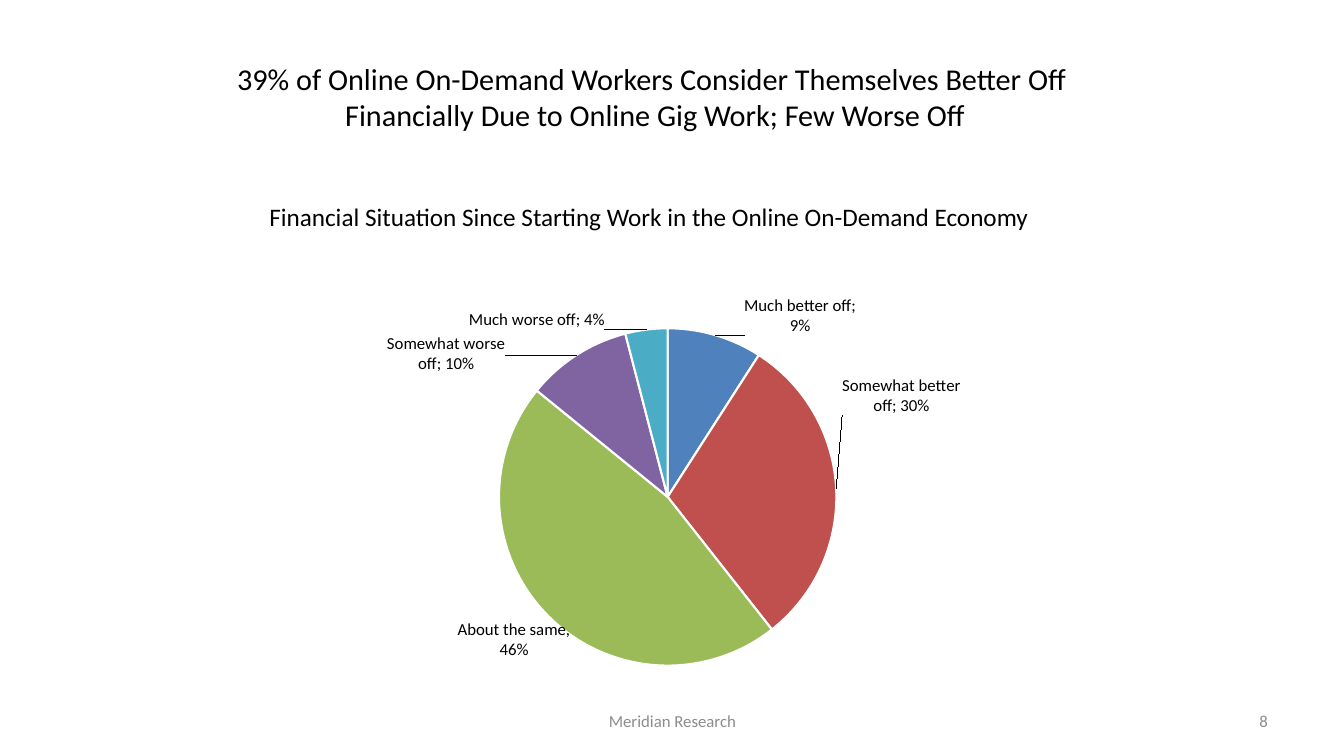
from lxml import etree
from pptx import Presentation
from pptx import util as u
from pptx.chart.data import CategoryChartData
from pptx.dml.color import RGBColor
from pptx.enum import chart as ch
from pptx.enum import text
from pptx.oxml.ns import qn

PX = 9525  # EMU per px, 96 px to the inch
FONT = "Calibri"
COLORS = {
    "text": "000000",
    "muted": "8C8C8C",
    "white": "FFFFFF",
    "blue": "4F81BD",
    "red": "C0504D",
    "green": "9BBB59",
    "purple": "8064A2",
    "teal": "4BACC6",
}
# Category, share, colour, label shift (fractions of the chart), own label text
SLICES = [
    ("Much better off", 0.09, "blue", (0.04, 0.01), None),
    ("Somewhat better off", 0.3, "red", (0, -0.16), None),
    ("About the same", 0.46, "green", (0.04, 0), "About the same, 46%"),
    ("Somewhat worse off", 0.1, "purple", (-0.1, 0.04), None),
    ("Much worse off", 0.04, "teal", (-0.06, 0.01), None),
]


def px(*lengths):
    return [u.Emu(n * PX) for n in lengths]


def rgb(name):
    return RGBColor.from_string(COLORS[name])


def style_font(font, size, color="text"):
    font.name = FONT
    font.size = u.Pt(size)
    font.color.rgb = rgb(color)


def fill_text(sp, content, size, align, color="text"):
    tf = sp.text_frame
    tf.vertical_anchor = text.MSO_ANCHOR.MIDDLE
    tf.text = content
    p = tf.paragraphs[0]
    p.alignment = align
    style_font(p.font, size, color)
    return tf


def add_title(s, content, box):
    sp = s.shapes.title
    sp.left, sp.top, sp.width, sp.height = px(*box)
    fill_text(sp, content, 21.6, text.PP_ALIGN.CENTER)


def add_text(s, content, box, size, align, color="text", wrap=True):
    sp = s.shapes.add_textbox(*px(*box))
    fill_text(sp, content, size, align, color).word_wrap = wrap


def manual_layout(**values):
    layout = etree.Element(qn("c:layout"))
    manual = etree.SubElement(layout, qn("c:manualLayout"))
    for tag, value in values.items():
        etree.SubElement(manual, qn("c:" + tag)).set("val", str(value))
    return layout


def place_plot(chart, x, y, w, h):
    area = chart._chartSpace.chart.plotArea
    for old in area.findall(qn("c:layout")):
        area.remove(old)
    area.insert(0, manual_layout(layoutTarget="inner", xMode="edge", yMode="edge",
                                 x=x, y=y, w=w, h=h))


def add_separator(labels):
    separator = etree.Element(qn("c:separator"))
    separator.text = "; "
    labels.find(qn("c:showBubbleSize")).addnext(separator)


def format_slice(point, color, own_text):
    point.format.fill.solid()
    point.format.fill.fore_color.rgb = rgb(color)
    point.format.line.color.rgb = rgb("white")
    point.format.line.width = u.Pt(1.5)
    label = point.data_label
    if own_text:
        p = label.text_frame.paragraphs[0]
        r = p.add_run()
        r.text = own_text
        style_font(r.font, 12)
    else:
        style_font(label.font, 12)
    label.position = ch.XL_LABEL_POSITION.OUTSIDE_END


def add_pie(s, box):
    data = CategoryChartData(number_format="0%")
    data.categories = [row[0] for row in SLICES]
    data.add_series("Series 1", [row[1] for row in SLICES])
    chart = s.shapes.add_chart(ch.XL_CHART_TYPE.PIE, *px(*box), data).chart
    chart.has_title = False
    chart.has_legend = False
    style_font(chart.font, 10)
    place_plot(chart, 0.23, 0.29, 0.58, 0.58)

    plot = chart.plots[0]
    plot.vary_by_categories = True
    series = plot.series[0]
    labels = series.data_labels
    labels.show_value = labels.show_category_name = True
    labels.number_format = "0%"
    labels.number_format_is_linked = False
    labels.position = ch.XL_LABEL_POSITION.OUTSIDE_END
    style_font(labels.font, 12)
    add_separator(labels._element)

    # Slices and their shifted labels
    for i, (_, _, color, _, own_text) in enumerate(SLICES):
        format_slice(series.points[i], color, own_text)
    for label, (_, _, _, (x, y), _) in zip(series._element.xpath(".//c:dLbl"), SLICES):
        label.insert(1, manual_layout(x=x, y=y))
        label.find(qn("c:showCatName")).set("val", "1")
        add_separator(label)


def main():
    prs = Presentation()
    prs.slide_width, prs.slide_height = px(1280, 720)
    s = prs.slides.add_slide(prs.slide_layouts[5])
    align = text.PP_ALIGN

    # Title
    add_title(s, "39% of Online On-Demand Workers Consider Themselves Better Off \v"
                 "Financially Due to Online Gig Work; Few Worse Off", (192, 32, 864, 120))

    # Footer and slide number
    add_text(s, "Meridian Research", (438, 667, 405, 38), 12, align.CENTER, "muted")
    add_text(s, "8", (918, 667, 299, 38), 12, align.RIGHT, "muted")

    # Chart and its heading
    add_pie(s, (299, 152, 648, 554))
    add_text(s, "Financial Situation Since Starting Work in the Online On-Demand Economy",
             (247, 187, 752, 38), 18, align.LEFT, wrap=False)

    prs.save("out.pptx")


if __name__ == "__main__":
    main()
